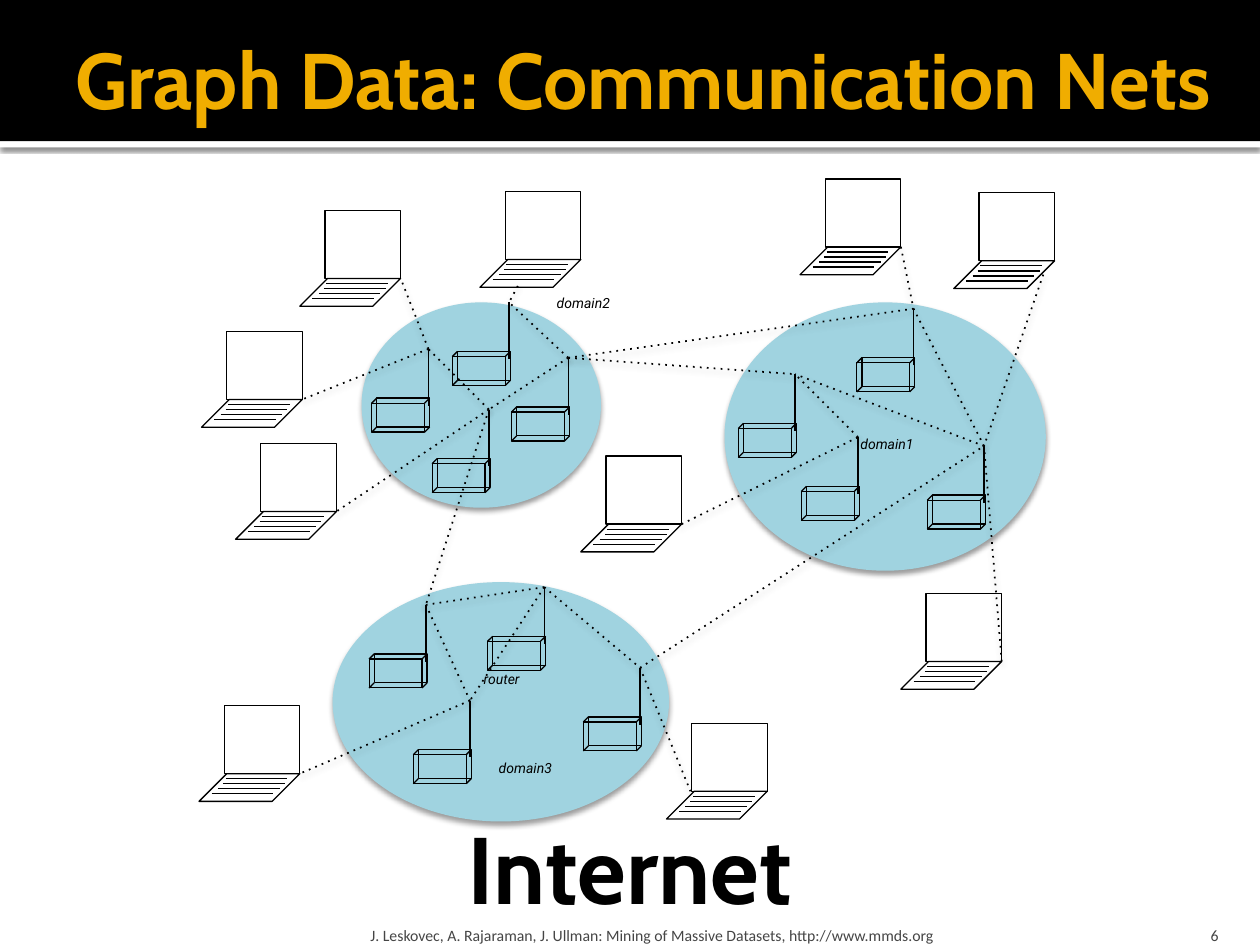
from lxml import etree
from pptx import Presentation
from pptx.dml.color import RGBColor
from pptx.enum.shapes import MSO_CONNECTOR, MSO_SHAPE
from pptx.enum.text import MSO_ANCHOR, PP_ALIGN
from pptx.oxml.ns import qn

RECT, OVAL, SLANT = MSO_SHAPE.RECTANGLE, MSO_SHAPE.OVAL, MSO_SHAPE.PARALLELOGRAM
STRAIGHT = MSO_CONNECTOR.STRAIGHT
LEFT, CENTER, RIGHT = PP_ALIGN.LEFT, PP_ALIGN.CENTER, PP_ALIGN.RIGHT
TOP, MIDDLE, BOTTOM = MSO_ANCHOR.TOP, MSO_ANCHOR.MIDDLE, MSO_ANCHOR.BOTTOM
PX = 9144  # 100 px to the inch
PT = 12700
BLACK, WHITE, POOL, GOLD, GREY = "000000", "FFFFFF", "A0D3E0", "F0AD00", "454545"
color = RGBColor.from_string

deck = Presentation()
deck.slide_width, deck.slide_height = 1000 * PX, 750 * PX
page = deck.slides.add_slide(deck.slide_layouts[5])
shapes = page.shapes


def add_shape(kind, left, top, width, height, fill=None, shadow=None):
    """Add a filled shape without outline, or an outlined one without fill."""
    shape = shapes.add_shape(kind, left * PX, top * PX, width * PX, height * PX)
    if fill:
        shape.fill.solid()
        shape.fill.fore_color.rgb = color(fill)
        shape.line.fill.background()
    else:
        shape.fill.background()
        shape.line.color.rgb = color(BLACK)
        shape.line.width = int(0.75 * PT)
    shape.shadow.inherit = False
    if shadow:
        shape._element.spPr.find(qn("a:effectLst")).append(etree.fromstring(shadow))
    return shape


def add_line(start, end, width=0.75, dotted=False, shadow=None):
    """Add a plain black line, or a dotted one with a shadow."""
    line = shapes.add_connector(STRAIGHT, *[value * PX for value in (*start, *end)])
    line.line.color.rgb = color(BLACK)
    line.line.width = int(width * PT)
    if dotted:
        etree.SubElement(line.line._get_or_add_ln(), qn("a:prstDash"), val="dot")
    effects = etree.SubElement(line._element.spPr, qn("a:effectLst"))
    if shadow:
        effects.append(etree.fromstring(shadow))


# Shadows: blur and distance in points, opacity in percent
banner_shadow, pool_shadow, link_shadow = [
    '<a:outerShdw xmlns:a="http://schemas.openxmlformats.org/drawingml/2006/main" '
    f'blurRad="{int(blur * PT)}" dist="{int(distance * PT)}" dir="5400000" '
    'algn="ctr" rotWithShape="0"><a:srgbClr val="000000">'
    f'<a:alpha val="{opacity * 1000}"/></a:srgbClr></a:outerShdw>'
    for blur, distance, opacity in [(2.5, 0.8, 60), (3.1, 2, 38), (3.5, 2, 38)]
]

# Banner
add_shape(RECT, 0, 112, 1000, 5, WHITE, banner_shadow)
add_shape(RECT, 0, 0, 1000, 112, BLACK)

# Domains
for bounds in [(575, 240, 255, 213), (287, 240, 190, 163), (264, 462, 267, 190)]:
    add_shape(OVAL, *bounds, POOL, pool_shadow)

# Laptops: keyboard corner, then the offset where the link attaches
laptops = {
    "pc2a": (238, 221, 80, 0),
    "pc2b": (160, 317, 80, 0),
    "pc2c": (187, 406, 80, 0),
    "pc2d": (381, 206, 30, 21),
    "pc1a": (635, 196, 80, 0),
    "pc3a": (158, 614, 80, 0),
    "pc3b": (529, 628, 19, 0),
    "pc1b": (461, 416, 80, 0),
    "pc1c": (715, 525, 80, 0),
    "pc1d": (757, 207, 71, 11),
}
anchors = {}
for name, (left, top, link_x, link_y) in laptops.items():
    keyboard = add_shape(SLANT, left, top, 80, 22)
    keyboard.adjustments[0] = 1
    add_shape(RECT, left + 20, top - 54, 60, 54)
    for key_x, key_y in [(21, 4), (19, 8), (15, 12), (10, 16)]:
        add_line((left + key_x, top + key_y), (left + key_x + 49, top + key_y))
    anchors[name] = (left + link_x, top + link_y)

# Routers: wire-frame box with an antenna, linked at its tip
routers = {
    "r1a": (586, 340), "r1b": (680, 288), "r1c": (736, 397), "r1d": (636, 390),
    "r2a": (295, 320), "r2b": (406, 327), "r2c": (343, 368), "r2d": (359, 283),
    "r3a": (328, 599), "r3b": (293, 523), "r3c": (387, 509), "r3d": (463, 573),
}
for name, (left, top) in routers.items():
    add_shape(RECT, left, top, 42, 23)
    add_shape(RECT, left + 4, top - 4, 42, 23)
    for x in (left, left + 42):
        for y in (top, top + 23):
            add_line((x, y), (x + 4, y - 4))
    anchors[name] = (left + 45, top - 43)
    add_line((left + 45, top + 2), anchors[name])

# Links
links = [
    ("r2a", "pc2b"), ("r2a", "pc2a"), ("r2c", "r2a"), ("r2b", "r2c"),
    ("r2b", "r2d"), ("pc2d", "r2d"), ("r2c", "pc2c"), ("r2c", "r3b"),
    ("r3c", "r3a"), ("r3c", "r3d"), ("r3c", "r3b"), ("r3b", "r3a"),
    ("r3a", "pc3a"), ("r3d", "pc3b"), ("pc1b", "r1d"), ("r1d", "r1a"),
    ("r2b", "r1a"), ("r2b", "r1b"), ("r1c", "r1b"), ("pc1a", "r1b"),
    ("r1c", "r1a"), ("pc1d", "r1c"), ("pc1c", "r1c"), ("r3d", "r1c"),
]
for start, end in links:
    add_line(anchors[start], anchors[end], 1, True, link_shadow)

# Title goes in front of the banner
title = shapes.title
shapes._spTree.append(title._element)

# Texts: box, bounds, insets, anchor, alignment, font, size, colour, bold, italic
plain = (10, 5, 10, 5)
label = (plain, TOP, LEFT, "Roboto", 8, BLACK, False, True)
texts = [
    ("domain2", (432, 229, 115, 39), *label),
    ("domain1", (673, 341, 115, 39), *label),
    ("domain3", (386, 598, 115, 39), *label),
    ("router", (374, 527, 90, 39), *label),
    ("Internet", (154, 638, 692, 101), plain, TOP, CENTER, "Cabin", 54, BLACK, True, False),
    ("Graph Data: Communication Nets", (50, 8, 950, 108), (10, 5, 5, 5),
     MIDDLE, LEFT, "Cabin", 45, GOLD, True, False),
    ("J. Leskovec, A. Rajaraman, J. Ullman: Mining of Massive Datasets, http://www.mmds.org",
     (289, 720, 602, 30), (5, 5, 5, 0), BOTTOM, LEFT, "Calibri", 9, GREY, False, False),
    ("6", (897, 720, 80, 30), (10, 5, 10, 0), BOTTOM, RIGHT, "Calibri", 9, GREY, False, False),
]
for words, bounds, insets, anchor, align, font, size, ink, bold, italic in texts:
    box = title if size == 45 else shapes.add_textbox(0, 0, 0, 0)
    box.left, box.top, box.width, box.height = [value * PX for value in bounds]
    frame = box.text_frame
    frame.word_wrap = True
    frame.vertical_anchor = anchor
    (frame.margin_left, frame.margin_top,
     frame.margin_right, frame.margin_bottom) = [value * PX for value in insets]
    para = frame.paragraphs[0]
    para.alignment = align
    span = para.add_run()
    span.text = words
    span.font.name = font
    span.font.size = size * PT
    span.font.bold, span.font.italic = bold, italic
    span.font.color.rgb = color(ink)

deck.save("out.pptx")
